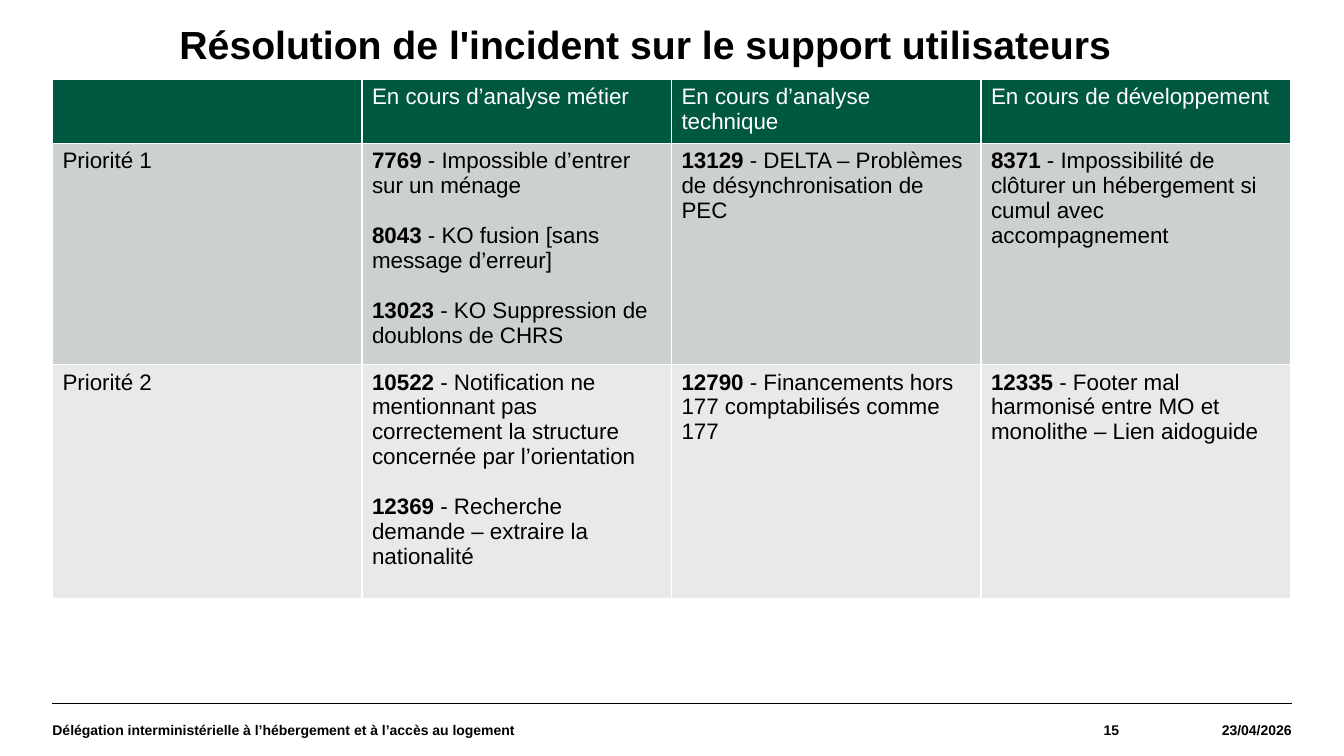
from lxml.etree import SubElement
from pptx import Presentation
from pptx.dml.color import RGBColor
from pptx.enum.text import MSO_ANCHOR, PP_ALIGN
from pptx.oxml.ns import qn
from pptx.util import Inches, Pt


def color(value):
    return RGBColor.from_string(value)


class Deck:
    """Holds the style and the current slide."""
    font = "Arial"
    black, white = "000000", "FFFFFF"
    header_fill = "005841"
    row_fills = ["CCD1CF", "E7EAE9"]
    cell_size = 16
    entry_gap = 17.9

    def __init__(self, prs):
        self.s = prs.slides.add_slide(prs.slide_layouts[6])

    def style(self, p, size, ink, bold=None):
        p.font.name = self.font
        p.font.size = Pt(size)
        p.font.color.rgb = color(ink)
        p.font.bold = bold

    def text(self, text, left, top, width, height, size,
             align=PP_ALIGN.LEFT, anchor=MSO_ANCHOR.MIDDLE, spacing=None):
        sp = self.s.shapes.add_textbox(
            Inches(left), Inches(top), Inches(width), Inches(height))
        tf = sp.text_frame
        tf.word_wrap = True
        tf.vertical_anchor = anchor
        tf.margin_left = tf.margin_right = tf.margin_top = tf.margin_bottom = 0
        p = tf.paragraphs[0]
        p.text = text
        p.alignment = align
        p.line_spacing = spacing
        self.style(p, size, self.black, True)

    def rule(self, x1, x2, y):
        line = self.s.shapes.add_connector(
            1, Inches(x1), Inches(y), Inches(x2), Inches(y))
        line.line.color.rgb = color(self.black)
        line.line.width = Pt(0.8)
        SubElement(line._element.spPr, qn("a:effectLst"))

    def borders(self, cell):
        tcPr = cell._tc.get_or_add_tcPr()
        for i, side in enumerate(["lnL", "lnR", "lnT", "lnB"]):
            ln = tcPr.makeelement(qn("a:" + side), {"w": str(Pt(1))})
            fill = SubElement(ln, qn("a:solidFill"))
            SubElement(fill, qn("a:srgbClr"), val=self.white)
            tcPr.insert(i, ln)

    def cell(self, cell, entries, fill, ink):
        """Each entry is a plain label or a (ticket, description) pair."""
        cell.fill.solid()
        cell.fill.fore_color.rgb = color(fill)
        self.borders(cell)
        tf = cell.text_frame
        for i, entry in enumerate(entries):
            p = tf.add_paragraph() if i else tf.paragraphs[0]
            if i:
                p.space_before = Pt(self.entry_gap)
            if isinstance(entry, str):
                p.text = entry
            else:
                ticket, description = entry
                r = p.add_run()
                r.text = ticket
                r.font.bold = True
                p.add_run().text = " - " + description
            self.style(p, self.cell_size, ink)

    def table(self, rows, left, top, width, heights):
        frame = self.s.shapes.add_table(
            len(rows), len(rows[0]), Inches(left), Inches(top),
            Inches(width), Inches(sum(heights)))
        table = frame.table
        for column in table.columns:
            column.width = Inches(width / len(rows[0]))
        for i, (row, height) in enumerate(zip(rows, heights)):
            table.rows[i].height = Inches(height)
            fill = self.row_fills[i - 1] if i else self.header_fill
            for j, entries in enumerate(row):
                self.cell(table.cell(i, j), entries, fill,
                          self.black if i else self.white)


INCIDENTS = [
    [[], ["En cours d’analyse métier"], ["En cours d’analyse technique"],
     ["En cours de développement"]],
    [["Priorité 1"],
     [("7769", "Impossible d’entrer sur un ménage"),
      ("8043", "KO fusion [sans message d’erreur]"),
      ("13023", "KO Suppression de doublons de CHRS")],
     [("13129", "DELTA – Problèmes de désynchronisation de PEC")],
     [("8371", "Impossibilité de clôturer un hébergement si cumul avec "
               "accompagnement")]],
    [["Priorité 2"],
     [("10522", "Notification ne mentionnant pas correctement la structure "
                "concernée par l’orientation"),
      ("12369", "Recherche demande – extraire la nationalité")],
     [("12790", "Financements hors 177 comptabilisés comme 177")],
     [("12335", "Footer mal harmonisé entre MO et monolithe – "
                "Lien aidoguide")]],
]


def main():
    prs = Presentation()
    prs.slide_width, prs.slide_height = Inches(13.33), Inches(7.5)
    deck = Deck(prs)

    # Title
    deck.text("Résolution de l'incident sur le support utilisateurs",
              1.78, 0.25, 11.02, 0.85, 28, anchor=MSO_ANCHOR.TOP, spacing=0.9)

    # Incident table
    deck.table(INCIDENTS, 0.52, 0.79, 12.28, [0.59, 2.08, 2.32])

    # Footer
    deck.rule(0.52, 12.81, 6.98)
    deck.text("Délégation interministérielle à l’hébergement et à l’accès "
              "au logement", 0.52, 6.98, 8.61, 0.52, 10)
    deck.text("15", 9.13, 6.98, 1.97, 0.52, 10, PP_ALIGN.RIGHT)
    deck.text("23/04/2026", 11.1, 6.98, 1.71, 0.52, 10, PP_ALIGN.RIGHT)

    prs.save("out.pptx")


if __name__ == "__main__":
    main()
